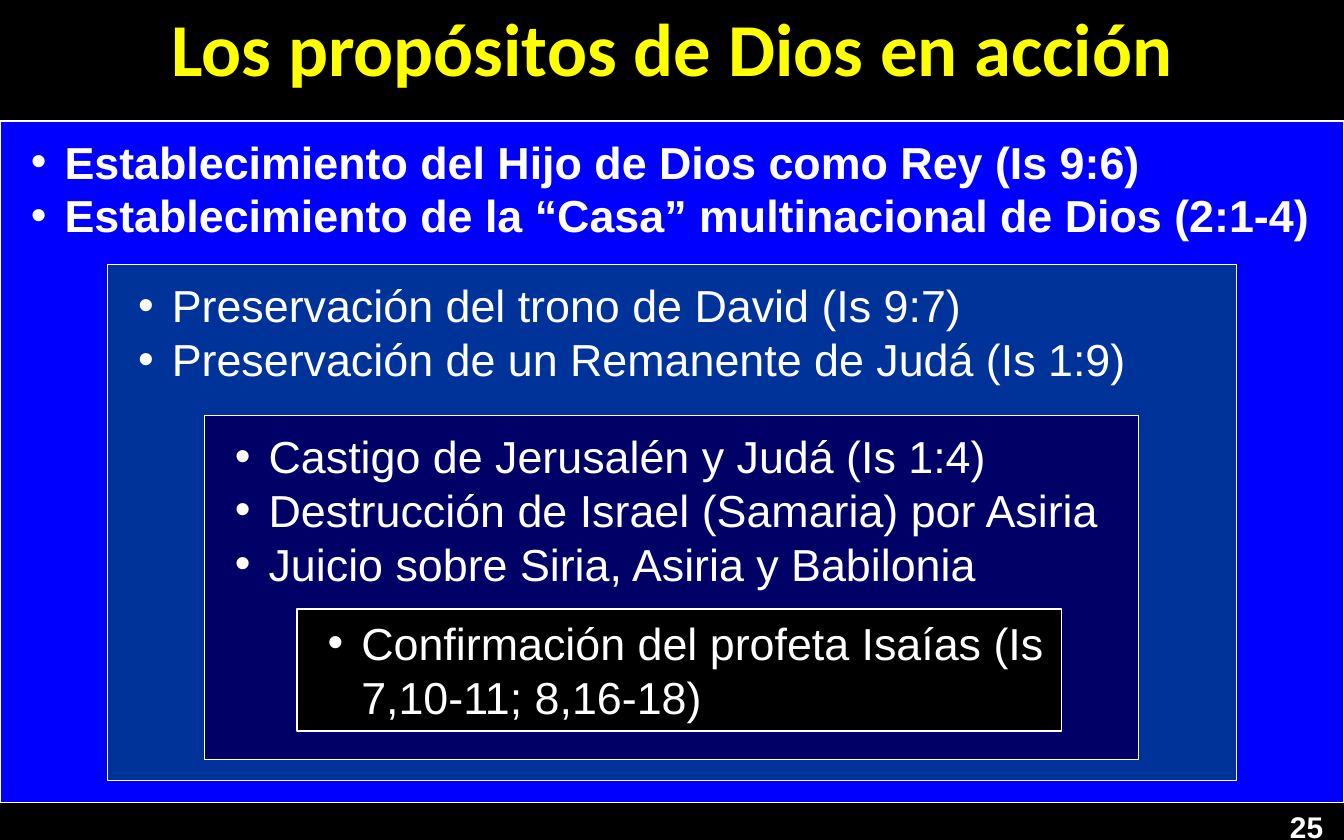
from dataclasses import dataclass

from lxml.etree import SubElement
from pptx import Presentation
from pptx.dml.color import RGBColor
from pptx.enum.shapes import MSO_SHAPE as Preset
from pptx.enum.text import MSO_ANCHOR as Anchor, MSO_AUTO_SIZE as AutoSize, PP_ALIGN as Align
from pptx.oxml.ns import qn
from pptx.shapes.autoshape import Shape
from pptx.slide import Slide
from pptx.text.text import TextFrame, _Paragraph as Paragraph
from pptx.util import Inches, Pt

BLACK = RGBColor(0x00, 0x00, 0x00)
WHITE = RGBColor(0xFF, 0xFF, 0xFF)
YELLOW = RGBColor(0xFF, 0xFF, 0x00)
BLUE = RGBColor(0x00, 0x00, 0xFF)
ROYAL = RGBColor(0x00, 0x33, 0x99)
NAVY = RGBColor(0x00, 0x00, 0x66)

CELL = Inches(0.1)
COLUMNS, ROWS = 100, 62.5


@dataclass(frozen=True)
class Area:
    column: float
    row: float
    columns: float
    rows: float


@dataclass(frozen=True)
class Purpose:
    area: Area
    fill: RGBColor
    points: tuple[str, ...]
    bold: bool = False
    top_margin: float = 0.1


OUTER = Purpose(
    Area(0, 9, COLUMNS, 50.7),
    BLUE,
    (
        "Establecimiento del Hijo de Dios como Rey (Is 9:6)",
        "Establecimiento de la “Casa” multinacional de Dios (2:1-4)",
    ),
    bold=True,
)
NESTED = (
    Purpose(
        Area(8, 19.7, 84, 38.4),
        ROYAL,
        (
            "Preservación del trono de David (Is 9:7)",
            "Preservación de un Remanente de Judá (Is 1:9)",
        ),
    ),
    Purpose(
        Area(15.2, 30.9, 69.5, 25.6),
        NAVY,
        (
            "Castigo de Jerusalén y Judá (Is 1:4)",
            "Destrucción de Israel (Samaria) por Asiria",
            "Juicio sobre Siria, Asiria y Babilonia",
        ),
    ),
    Purpose(
        Area(22.1, 45.3, 56.9, 9.1),
        BLACK,
        ("Confirmación del profeta Isaías (Is 7,10-11; 8,16-18)",),
        top_margin=0.05,
    ),
)


def apply(target: object, values: dict[str, object]) -> None:
    for name, value in values.items():
        setattr(target, name, value)


def bounds(area: Area) -> dict[str, int]:
    return {
        "left": int(area.column * CELL),
        "top": int(area.row * CELL),
        "width": int(area.columns * CELL),
        "height": int(area.rows * CELL),
    }


def style(paragraph: Paragraph, size: int, color: RGBColor, bold: bool, name: str = "Arial") -> None:
    font = paragraph.runs[0].font
    apply(font, {"name": name, "size": Pt(size), "bold": bold})
    font.color.rgb = color


def add_bullet(paragraph: Paragraph) -> None:
    properties = paragraph._p.get_or_add_pPr()
    apply_indent = {"marL": Inches(0.38), "indent": Inches(-0.25)}
    for name, length in apply_indent.items():
        properties.set(name, str(length))
    SubElement(properties, qn("a:buFont")).set("typeface", "Arial")
    SubElement(properties, qn("a:buChar")).set("char", "•")


def write_points(frame: TextFrame, purpose: Purpose) -> None:
    apply(frame, {
        "text": "\n".join(purpose.points),
        "word_wrap": True,
        "auto_size": AutoSize.NONE,
        "vertical_anchor": Anchor.TOP,
        "margin_left": Inches(0.1),
        "margin_right": Inches(0.1),
        "margin_top": Inches(purpose.top_margin),
        "margin_bottom": Inches(0.05),
    })
    for paragraph in frame.paragraphs:
        apply(paragraph, {"alignment": Align.LEFT, "space_before": Pt(0)})
        add_bullet(paragraph)
        style(paragraph, 24, WHITE, purpose.bold)


def draw_purpose(panel: Shape, purpose: Purpose) -> None:
    apply(panel, bounds(purpose.area))
    panel.fill.solid()
    panel.fill.fore_color.rgb = purpose.fill
    panel.line.color.rgb = WHITE
    panel.line.width = Pt(0.75)
    write_points(panel.text_frame, purpose)


def draw_title(slide: Slide) -> None:
    title = slide.shapes.title
    apply(title, bounds(Area(0, -0.2, COLUMNS, 7.3)))
    frame = title.text_frame
    apply(frame, {
        "text": "Los propósitos de Dios en acción",
        "vertical_anchor": Anchor.MIDDLE,
        "auto_size": AutoSize.NONE,
    })
    frame.paragraphs[0].alignment = Align.CENTER
    style(frame.paragraphs[0], 40, YELLOW, True, "Calibri")


def draw_page_number(slide: Slide) -> None:
    frame = slide.shapes.add_textbox(**bounds(Area(95, 59.7, 5, 2.8))).text_frame
    apply(frame, {"text": "25", "word_wrap": True})
    style(frame.paragraphs[0], 16, WHITE, True)


def main() -> None:
    deck = Presentation()
    apply(deck, {"slide_width": int(COLUMNS * CELL), "slide_height": int(ROWS * CELL)})
    slide = deck.slides.add_slide(deck.slide_layouts[1])
    slide.background.fill.solid()
    slide.background.fill.fore_color.rgb = BLACK

    draw_title(slide)
    draw_purpose(slide.placeholders[1], OUTER)
    draw_page_number(slide)
    for purpose in NESTED:
        panel = slide.shapes.add_shape(Preset.RECTANGLE, **bounds(purpose.area))
        panel.shadow.inherit = False
        draw_purpose(panel, purpose)

    deck.save("out.pptx")


if __name__ == "__main__":
    main()
